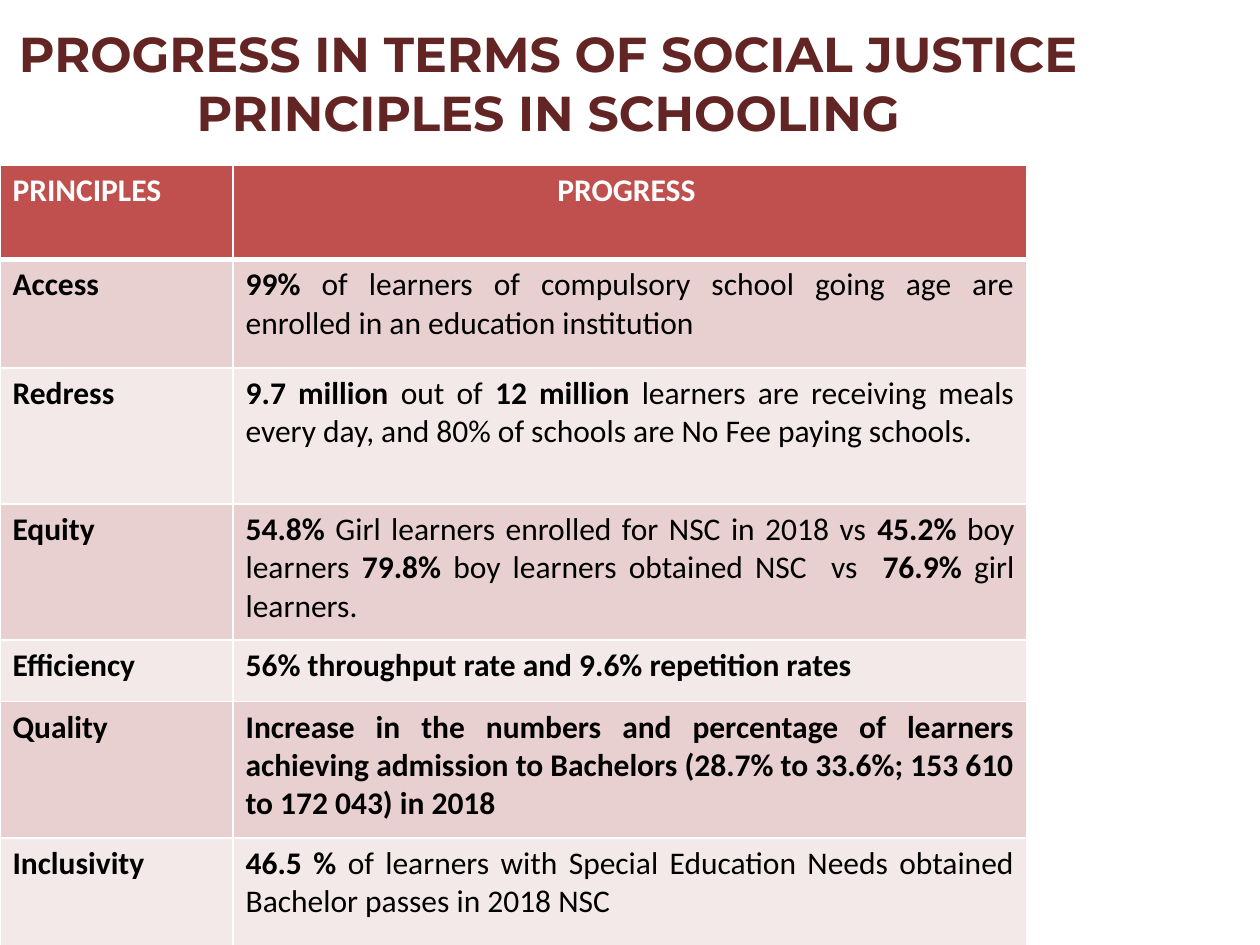
from lxml import etree
from pptx import Presentation
from pptx.dml.color import RGBColor
from pptx.enum.text import MSO_ANCHOR as Anchor, PP_ALIGN as Align
from pptx.oxml.ns import qn
from pptx.util import Pt

COLORS = {
    "title": "632523", "header": "C0504D", "odd": "E8D0D0", "even": "F4E9E9",
    "white": "FFFFFF", "black": "000000",
}

# Progress runs alternate between bold and regular, starting with bold
PRINCIPLES = [
    ("Access", 61.92, ["99% ", "of learners of compulsory school going age are "
                       "enrolled in an education institution"]),
    ("Redress", 77.76, ["9.7 million ", "out of ", "12 million ",
                        "learners are receiving meals every day, and 80% of "
                        "schools are No Fee paying schools."]),
    ("Equity", 77.76, ["54.8% ", "Girl learners enrolled for NSC in 2018 vs ",
                       "45.2% ", "boy learners ", "79.8%",
                       " boy learners obtained NSC  vs  ", "76.9% ",
                       "girl learners."]),
    ("Efficiency", 35.28, ["56% throughput rate and 9.6% repetition rates"]),
    ("Quality", 77.76, ["Increase in the numbers and percentage of learners "
                        "achieving admission to Bachelors (28.7% to 33.6%; "
                        "153 610 to 172 043) in 2018"]),
    ("Inclusivity", 61.92, ["46.5 % ", "of learners with Special Education Needs "
                            "obtained Bachelor passes in 2018 NSC"]),
]


class SlideBuilder:
    title_font, table_font = "Montserrat", "Calibri"
    title_size, table_size = 28, 18

    def __init__(self, slide):
        self.slide = slide

    def add_run(self, paragraph, text, font, size, color, bold=True):
        run = paragraph.add_run()
        run.text = text
        run.font.name, run.font.size, run.font.bold = font, Pt(size), bold
        run.font.color.rgb = RGBColor.from_string(COLORS[color])

    def title(self, text, left, top, width, height):
        box = self.slide.shapes.add_textbox(Pt(left), Pt(top), Pt(width), Pt(height))
        frame = box.text_frame
        frame.word_wrap = True
        frame.vertical_anchor = Anchor.MIDDLE
        heading = frame.paragraphs[0]
        heading.alignment = Align.CENTER
        self.add_run(heading, text, self.title_font, self.title_size, "title")

    def table(self, left, top, widths, heights):
        frame = self.slide.shapes.add_table(
            len(heights), len(widths), Pt(left), Pt(top),
            Pt(sum(widths)), Pt(sum(heights)))
        grid = frame.table
        for column, width in zip(grid.columns, widths):
            column.width = Pt(width)
        for row, height in zip(grid.rows, heights):
            row.height = Pt(height)
        return grid

    def cell(self, cell, runs, fill, color, align, top_line=1, bottom_line=1):
        self.borders(cell, {"L": 1, "R": 1, "T": top_line, "B": bottom_line})
        cell.fill.solid()
        cell.fill.fore_color.rgb = RGBColor.from_string(COLORS[fill])
        paragraph = cell.text_frame.paragraphs[0]
        paragraph.alignment = align
        for index, text in enumerate(runs):
            self.add_run(paragraph, text, self.table_font, self.table_size,
                         color, bold=index % 2 == 0)

    def borders(self, cell, line_widths):
        properties = cell._tc.get_or_add_tcPr()
        for side, width in line_widths.items():
            line = etree.SubElement(properties, qn(f"a:ln{side}"), w=str(Pt(width)))
            paint = etree.SubElement(line, qn("a:solidFill"))
            etree.SubElement(paint, qn("a:srgbClr"), val=COLORS["white"])


def main():
    deck = Presentation()
    deck.slide_width, deck.slide_height = Pt(720), Pt(540)
    builder = SlideBuilder(deck.slides.add_slide(deck.slide_layouts[6]))

    # Heading
    builder.title("PROGRESS IN TERMS OF SOCIAL JUSTICE PRINCIPLES IN SCHOOLING",
                  0, 0, 626.4, 94.3)

    # Table header
    heights = [54] + [height for _, height, _ in PRINCIPLES]
    progress = builder.table(0, 94.3, [133.2, 453.6], heights)
    for column, (label, align) in enumerate([("PRINCIPLES", Align.LEFT),
                                             ("PROGRESS ", Align.CENTER)]):
        builder.cell(progress.cell(0, column), [label], "header", "white", align,
                     bottom_line=3)

    # One banded row per principle
    for row, (principle, _, runs) in enumerate(PRINCIPLES, start=1):
        band = "odd" if row % 2 else "even"
        top_line = 3 if row == 1 else 1
        builder.cell(progress.cell(row, 0), [principle], band, "black",
                     Align.LEFT, top_line)
        builder.cell(progress.cell(row, 1), runs, band, "black",
                     Align.JUSTIFY, top_line)

    deck.save("out.pptx")


if __name__ == "__main__":
    main()
